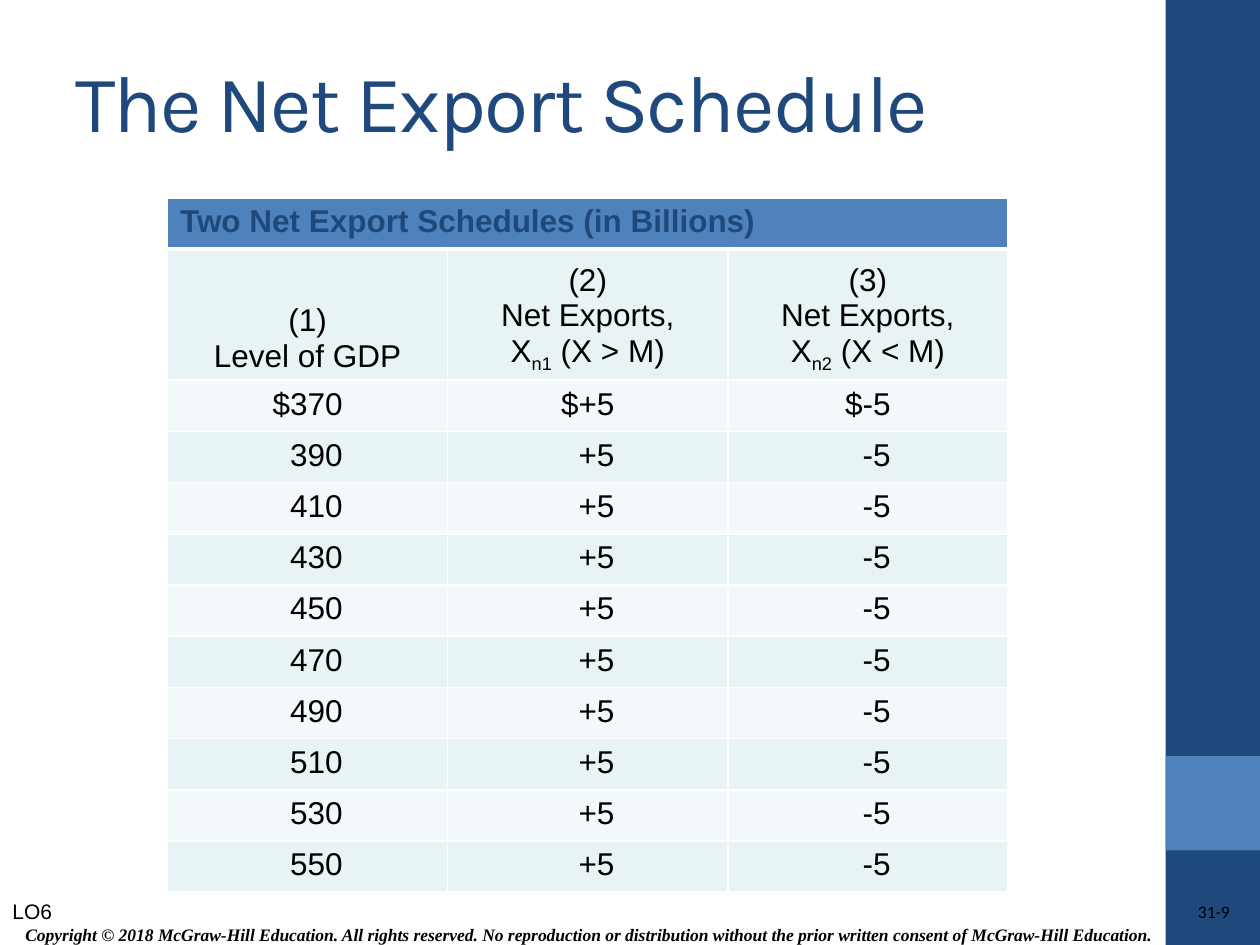
from dataclasses import dataclass

from lxml.etree import SubElement
from pptx import Presentation
from pptx.dml.color import RGBColor
from pptx.enum.shapes import MSO_SHAPE
from pptx.enum.text import MSO_ANCHOR as Anchor, PP_ALIGN as Align
from pptx.oxml.ns import qn
from pptx.util import Inches, Pt

NAVY = RGBColor(0x1F, 0x49, 0x7D)
BLUE = RGBColor(0x4F, 0x81, 0xBD)
BLACK = RGBColor(0, 0, 0)
WHITE = RGBColor(0xFF, 0xFF, 0xFF)
BAND_DARK = RGBColor(0xE7, 0xF3, 0xF4)
BAND_LIGHT = RGBColor(0xF3, 0xF9, 0xFA)

TABLE_LEFT, TABLE_TOP, TABLE_WIDTH, TABLE_HEIGHT = 1.33, 1.57, 6.67, 5.47
HEADING_HEIGHT = 1
CELL_INSET = 0.1
DOLLAR_WIDTH = 0.14

TABLE_TITLE = "Two Net Export Schedules (in Billions)"
GDP_LEVELS = range(370, 551, 20)
NET_EXPORTS = ("+5", "-5")


@dataclass(frozen=True)
class Band:
    top: float
    height: float
    color: RGBColor


@dataclass(frozen=True)
class Label:
    text: str
    left: float
    top: float
    width: float
    height: float
    size: float
    font: str
    color: RGBColor = BLACK
    align: Align = Align.LEFT
    anchor: Anchor = Anchor.TOP
    emphasis: bool = False
    inset: bool = True
    tracking: int = 0
    line_spacing: float = 1.0


@dataclass(frozen=True)
class Heading:
    lines: tuple[str, ...]
    subscript: str = ""
    condition: str = ""


BANDS = (Band(0, 7.5, NAVY), Band(6, 0.75, BLUE))

LABELS = (
    Label("Copyright © 2018 McGraw-Hill Education. All rights reserved. No reproduction or "
          "distribution without the prior written consent of McGraw-Hill Education.",
          0.06, 7.28, 9.22, 0.28, 10, "Times New Roman",
          align=Align.CENTER, anchor=Anchor.MIDDLE, emphasis=True),
    Label("31-9", 7.81, 7.15, 1.95, 0.2, 10, "Calibri",
          align=Align.RIGHT, inset=False, line_spacing=1.02),
    Label("The Net Export Schedule", 0.5, 0.17, 8.33, 1.25, 46, "Karla", NAVY,
          anchor=Anchor.MIDDLE, tracking=-100),
    Label("LO6", 0, 7.08, 0.92, 0.3, 12, "Arial"),
)

HEADINGS = (
    Heading(("(1)", "Level of GDP")),
    Heading(("(2)", "Net Exports,", "X"), "n1", " (X > M)"),
    Heading(("(3)", "Net Exports,", "X"), "n2", " (X < M)"),
)


def add_band(slide, band: Band) -> None:
    """Draw one block of the right-hand sidebar."""
    block = slide.shapes.add_shape(MSO_SHAPE.RECTANGLE, Inches(9.25), Inches(band.top),
                                   Inches(0.75), Inches(band.height))
    block.shadow.inherit = False
    block.fill.solid()
    block.fill.fore_color.rgb = band.color
    block.line.fill.background()


def add_label(slide, label: Label) -> None:
    """Draw one single-paragraph text box."""
    frame = slide.shapes.add_textbox(Inches(label.left), Inches(label.top),
                                     Inches(label.width), Inches(label.height)).text_frame
    frame.word_wrap = True
    frame.vertical_anchor = label.anchor
    if not label.inset:
        frame.margin_left = frame.margin_right = frame.margin_top = frame.margin_bottom = 0
    paragraph = frame.paragraphs[0]
    paragraph.alignment = label.align
    paragraph.line_spacing = label.line_spacing
    run = paragraph.add_run()
    run.text = label.text
    font = paragraph.font
    font.size, font.name, font.color.rgb = Pt(label.size), label.font, label.color
    font.bold = font.italic = label.emphasis
    if label.tracking:
        run.font._element.set("spc", str(label.tracking))


def style_cell(cell, fill: RGBColor, top: float = 1, bottom: float = 1) -> None:
    """Give a cell white borders, of the given points above and below, and a fill."""
    properties = cell._tc.get_or_add_tcPr()
    for side, width in (("L", 1), ("R", 1), ("T", top), ("B", bottom)):
        border = SubElement(properties, qn(f"a:ln{side}"), w=str(Pt(width)))
        SubElement(SubElement(border, qn("a:solidFill")), qn("a:srgbClr"), val=str(WHITE))
    cell.fill.solid()
    cell.fill.fore_color.rgb = fill


def style_text(cell, color: RGBColor = BLACK, bold: bool = False,
               align: Align = Align.CENTER) -> None:
    """Set the table font on every paragraph of a cell."""
    for paragraph in cell.text_frame.paragraphs:
        paragraph.alignment = align
        font = paragraph.font
        font.size, font.name, font.bold, font.color.rgb = Pt(18), "Arial", bold, color


def fill_heading(cell, heading: Heading) -> None:
    """Write a column heading with its optional subscript."""
    style_cell(cell, BAND_DARK, top=3)
    cell.vertical_anchor = Anchor.BOTTOM
    cell.text = "\n".join(heading.lines)
    if heading.subscript:
        last_line = cell.text_frame.paragraphs[-1]
        subscript = last_line.add_run()
        subscript.text = heading.subscript
        subscript.font._element.set("baseline", "-25000")
        last_line.add_run().text = heading.condition
    style_text(cell)


def add_schedule(slide) -> None:
    """Draw the table of net exports by level of GDP."""
    row_count = len(GDP_LEVELS) + 2
    table = slide.shapes.add_table(row_count, len(HEADINGS), Inches(TABLE_LEFT),
                                   Inches(TABLE_TOP), Inches(TABLE_WIDTH),
                                   Inches(TABLE_HEIGHT)).table
    table.first_row = table.horz_banding = False
    for row in table.rows:
        row.height = Inches((TABLE_HEIGHT - HEADING_HEIGHT) / (row_count - 1))
    table.rows[1].height = Inches(HEADING_HEIGHT)

    title = table.cell(0, 0)
    title.merge(table.cell(0, len(HEADINGS) - 1))
    for column, heading in enumerate(HEADINGS):
        style_cell(table.cell(0, column), BLUE, bottom=3)
        fill_heading(table.cell(1, column), heading)
    title.text = TABLE_TITLE
    style_text(title, NAVY, True, Align.LEFT)

    for index, level in enumerate(GDP_LEVELS):
        for column, value in enumerate((str(level), *NET_EXPORTS)):
            cell = table.cell(index + 2, column)
            style_cell(cell, BAND_DARK if index % 2 else BAND_LIGHT)
            cell.text = value if index else f"${value}"
            cell.margin_left = Inches(CELL_INSET + (DOLLAR_WIDTH if index else 0))
            style_text(cell)


def main() -> None:
    """Build the slide and save it."""
    presentation = Presentation()
    presentation.slide_width, presentation.slide_height = Inches(10), Inches(7.5)
    slide = presentation.slides.add_slide(presentation.slide_layouts[6])
    for band in BANDS:
        add_band(slide, band)
    for label in LABELS:
        add_label(slide, label)
    add_schedule(slide)
    presentation.save("out.pptx")


if __name__ == "__main__":
    main()
